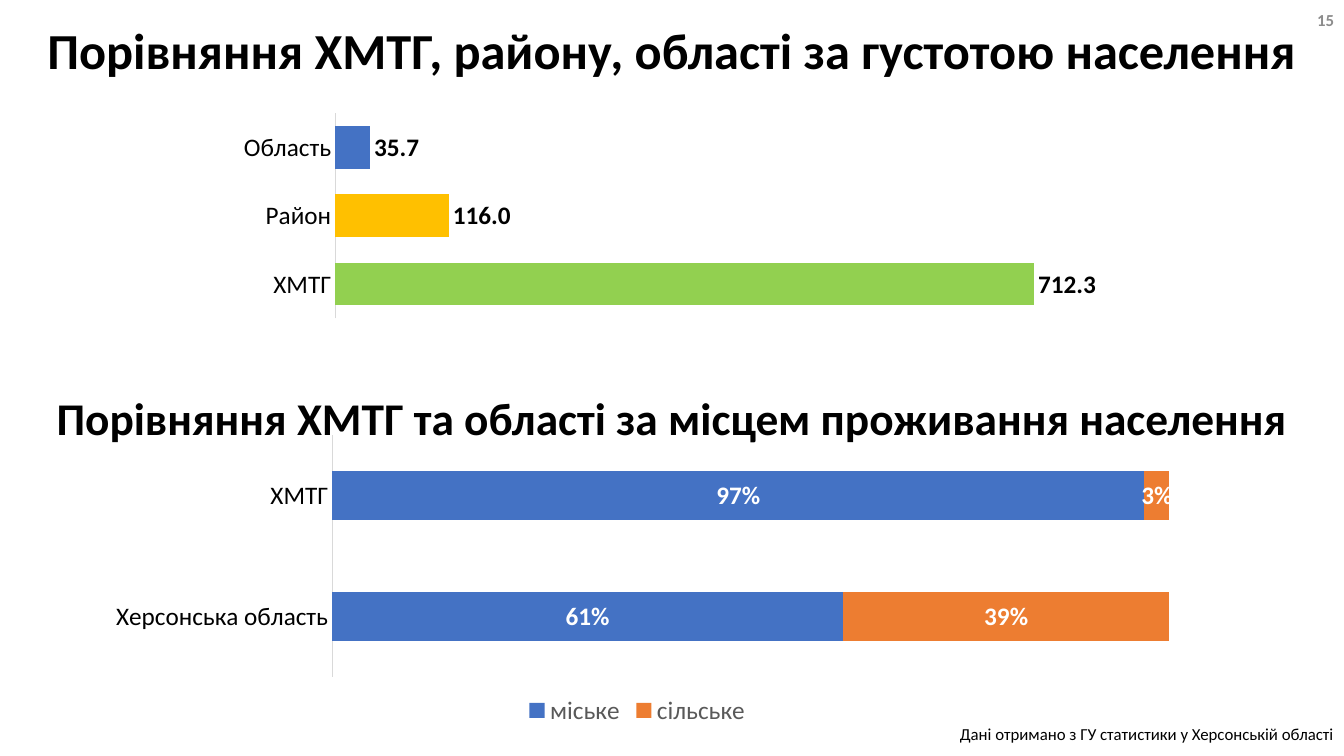
from lxml import etree
from pptx import Presentation
from pptx.chart.data import CategoryChartData
from pptx.dml.color import RGBColor
from pptx.enum.chart import XL_CHART_TYPE as ChartType
from pptx.enum.chart import XL_LABEL_POSITION as LabelPosition
from pptx.enum.chart import XL_LEGEND_POSITION as LegendPosition
from pptx.enum.chart import XL_TICK_MARK as TickMark
from pptx.enum.text import MSO_ANCHOR as Anchor
from pptx.enum.text import MSO_AUTO_SIZE as AutoSize
from pptx.enum.text import PP_ALIGN as Align
from pptx.oxml.ns import qn
from pptx.util import Pt

PX = 9144  # 100 px to the inch
SLIDE_W, SLIDE_H = 1333, 750
FONT = "Calibri"

BLACK = RGBColor(0x00, 0x00, 0x00)
WHITE = RGBColor(0xFF, 0xFF, 0xFF)
LEGEND_GRAY = RGBColor(0x59, 0x59, 0x59)
NUMBER_GRAY = RGBColor(0x8C, 0x8C, 0x8C)
AXIS_GRAY = RGBColor(0xD9, 0xD9, 0xD9)
BLUE = RGBColor(0x44, 0x72, 0xC4)
ORANGE = RGBColor(0xED, 0x7D, 0x31)
GREEN = RGBColor(0x92, 0xD0, 0x50)
YELLOW = RGBColor(0xFF, 0xC0, 0x00)


def emu(*lengths):
    return [length * PX for length in lengths]


def format_font(font, size=18, color=BLACK, bold=False):
    font.name = FONT
    font.size = Pt(size)
    font.color.rgb = color
    font.bold = bold


def write_text(shape, text, align=Align.CENTER, anchor=Anchor.MIDDLE,
               spacing=1.0, **font_format):
    frame = shape.text_frame
    frame.word_wrap = True
    frame.auto_size = AutoSize.NONE
    frame.vertical_anchor = anchor
    paragraph = frame.paragraphs[0]
    paragraph.alignment = align
    paragraph.line_spacing = spacing
    run = paragraph.add_run()
    run.text = text
    format_font(run.font, **font_format)


def add_text(slide, box, text, **text_format):
    write_text(slide.shapes.add_textbox(*emu(*box)), text, **text_format)


def place_plot(chart, fractions):
    """Fix the inner plot area as x, y, w, h fractions of the chart."""
    plot_area = chart.plots[0]._element.getparent()
    layout = plot_area.find(qn("c:layout"))
    if layout is None:
        layout = etree.Element(qn("c:layout"))
        plot_area.insert(0, layout)
    manual = etree.SubElement(layout, qn("c:manualLayout"))
    settings = [("layoutTarget", "inner"), ("xMode", "edge"), ("yMode", "edge")]
    settings += zip("xywh", fractions)
    for tag, value in settings:
        etree.SubElement(manual, qn(f"c:{tag}")).set("val", str(value))


def add_bars(slide, box, kind, categories, series, plot_box, gap, maximum,
             number_format, label_position, label_color):
    """Draw horizontal bars; series holds (name, values, color) rows."""
    table = CategoryChartData(number_format=number_format)
    table.categories = categories
    for name, values, _ in series:
        table.add_series(name, values)
    chart = slide.shapes.add_chart(kind, *emu(*box), table).chart
    format_font(chart.font)
    chart.has_title = False
    chart.has_legend = False

    chart.value_axis.visible = False
    chart.value_axis.has_major_gridlines = False
    chart.value_axis.minimum_scale = 0
    chart.value_axis.maximum_scale = maximum
    axis = chart.category_axis
    axis.major_tick_mark = axis.minor_tick_mark = TickMark.NONE
    axis.format.line.color.rgb = AXIS_GRAY
    axis.format.line.width = Pt(0.75)
    format_font(axis.tick_labels.font)

    plot = chart.plots[0]
    plot.vary_by_categories = False
    plot.gap_width = gap
    for bars, (_, _, color) in zip(plot.series, series):
        bars.format.fill.solid()
        bars.format.fill.fore_color.rgb = color
        bars.invert_if_negative = False
        labels = bars.data_labels
        labels.show_value = True
        labels.number_format = number_format
        labels.number_format_is_linked = False
        labels.position = label_position
        format_font(labels.font, color=label_color, bold=True)
    place_plot(chart, plot_box)
    return chart


def add_density_chart(slide):
    chart = add_bars(
        slide, (181, 76, 971, 273), ChartType.BAR_CLUSTERED,
        ["ХМТГ", "Район", "Область"],
        [("Series 1", (712.3, 116, 35.7), BLUE)],
        plot_box=(0.156, 0.132, 0.802, 0.747), gap=60, maximum=800,
        number_format="0.0", label_position=LabelPosition.OUTSIDE_END,
        label_color=BLACK)
    for index, color in enumerate((GREEN, YELLOW)):
        fill = chart.plots[0].series[0].points[index].format.fill
        fill.solid()
        fill.fore_color.rgb = color


def add_residence_chart(slide):
    chart = add_bars(
        slide, (82, 425, 1100, 300), ChartType.BAR_STACKED_100,
        ["Херсонська область", "ХМТГ"],
        [("міське", (0.61, 0.97), BLUE), ("сільське", (0.39, 0.03), ORANGE)],
        plot_box=(0.225, 0.022, 0.755, 0.8), gap=150, maximum=1,
        number_format="0%", label_position=LabelPosition.CENTER,
        label_color=WHITE)
    chart.plots[0].overlap = 100
    chart.has_legend = True
    chart.legend.position = LegendPosition.BOTTOM
    chart.legend.include_in_layout = False
    format_font(chart.legend.font, color=LEGEND_GRAY)


def main():
    deck = Presentation()
    deck.slide_width, deck.slide_height = emu(SLIDE_W, SLIDE_H)
    slide = deck.slides.add_slide(deck.slide_layouts[5])

    title = slide.shapes.title
    title.left, title.top, title.width, title.height = emu(0, 13, SLIDE_W, 79)
    write_text(title, "Порівняння ХМТГ, району, області за густотою населення",
               spacing=0.9, size=36, bold=True)
    add_density_chart(slide)
    add_text(slide, (0, 713, SLIDE_W, 30),
             "Дані отримано з ГУ статистики у Херсонській області",
             align=Align.RIGHT, anchor=Anchor.TOP, size=12)
    add_residence_chart(slide)
    add_text(slide, (0, 375, SLIDE_W, 73),
             "Порівняння ХМТГ та області за місцем проживання населення",
             spacing=1.1, size=32.4, bold=True)
    add_text(slide, (1033, 0, 300, 40), "15", align=Align.RIGHT, size=12,
             color=NUMBER_GRAY, bold=True)
    deck.save("out.pptx")


if __name__ == "__main__":
    main()
